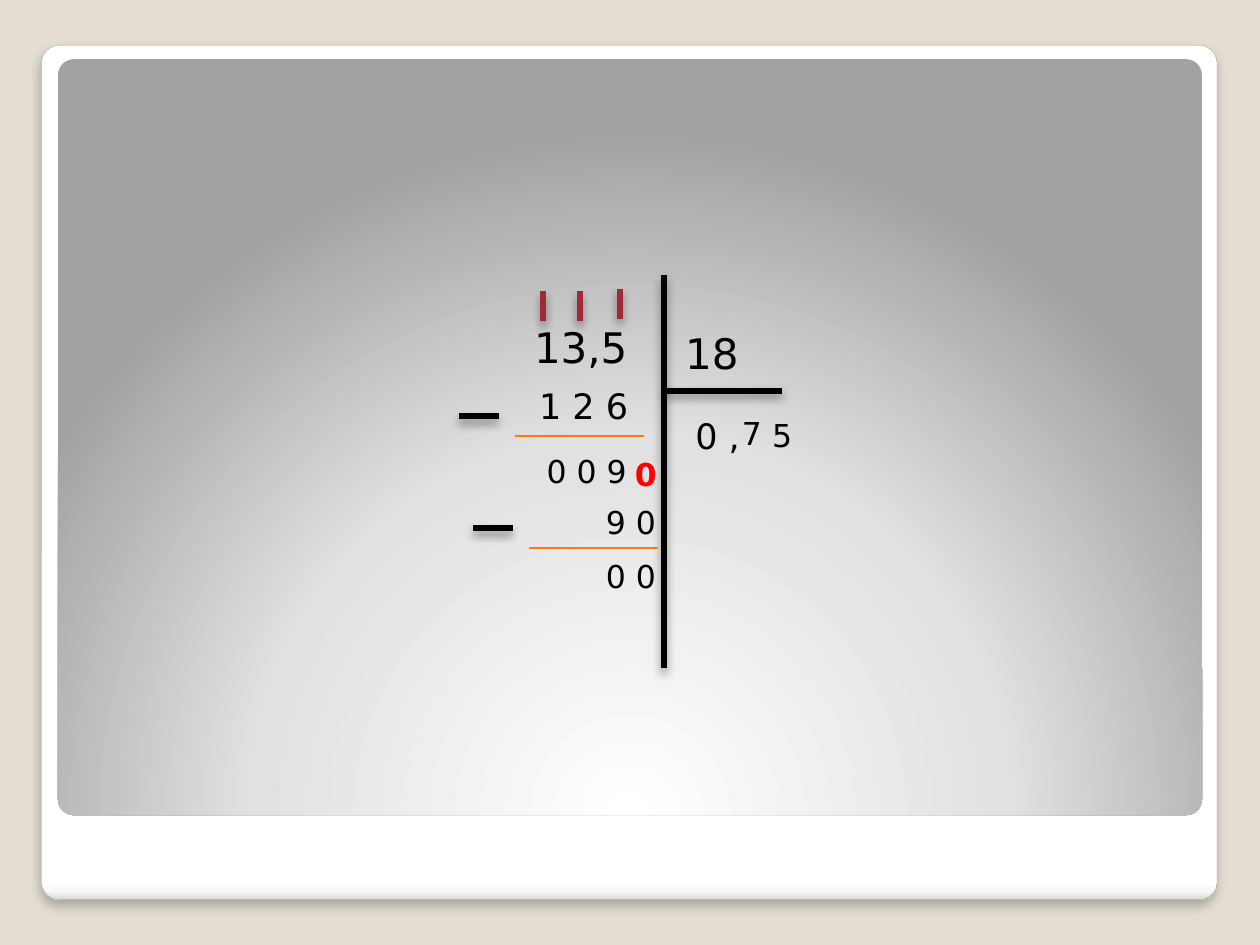
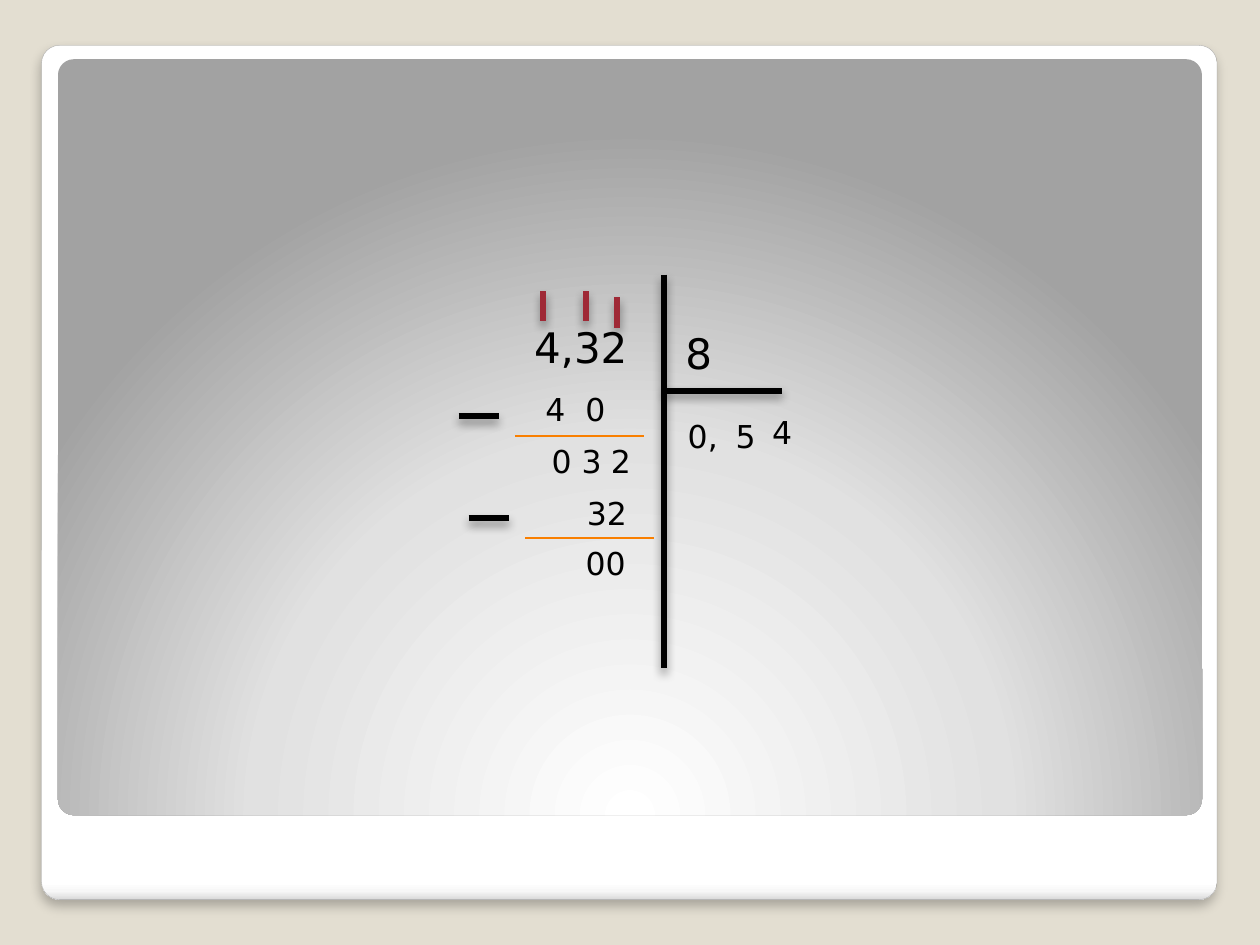
from dataclasses import dataclass

from lxml import etree
from pptx import Presentation
from pptx import util as u
from pptx.dml.color import RGBColor
from pptx.enum import shapes, text
from pptx.oxml import parse_xml
from pptx.oxml.ns import nsdecls, qn

SCALE = 9144  # 100 px to the inch
FONT = "DejaVu Sans"
SAND, BLACK, WINE, ORANGE, RED, GREY = (
    "E3DED1", "000000", "9F2936", "F97F00", "FF0000", "A4A4A4")
THICK, THIN = 3.35, 0.75


@dataclass
class Shade:
    alpha: int
    blur: float
    dist: float


@dataclass
class Panel:
    box: tuple[int, int, int, int]
    stops: list[tuple[int, str]]
    flow: str
    edge: str | None = None
    shade: Shade | None = None


@dataclass
class Word:
    x: int
    y: int
    w: int
    h: int
    body: str
    size: int = 18
    color: str = BLACK
    bold: bool = False
    wrap: bool = False
    gap: int = 0  # letter spacing, hundredths of a point


@dataclass
class Sum:
    ticks: list[tuple[int, int]]
    rules: list[tuple[int, int]]
    words: list[Word]


# Shared frame
SOFT = Shade(25, 6, 4)
DROP = Shade(40, 5.2, 3)
PANELS = [
    Panel((33, 36, 933, 678),
          [(0, "FFFFFF"), (98, "FFFFFF"), (99, "F7F7F7"), (100, "DADADA")],
          '<a:lin ang="5400000" scaled="0"/>', GREY, SOFT),
    Panel((46, 47, 908, 600),
          [(0, "FFFFFF"), (55, "E1E1E1"), (100, "A2A2A2")],
          '<a:path path="circle"><a:fillToRect l="50000" t="175000" '
          'r="50000" b="-75000"/></a:path>'),
]

# The two divisions
SUMS = [
    Sum([(431, 231), (460, 231), (492, 229)],
        [(409, 346), (420, 435)],
        [Word(414, 250, 97, 50, "13,5", 24),
         Word(534, 255, 63, 50, "18", 24),
         Word(542, 324, 58, 44, "0 ,", 20),
         Word(579, 324, 36, 40, "7"),
         Word(418, 300, 93, 44, "1 2 6", 20),
         Word(424, 354, 86, 40, "0 0 9"),
         Word(494, 356, 35, 40, "0", color=RED, bold=True, wrap=True),
         Word(603, 325, 36, 40, "5"),
         Word(471, 394, 61, 40, "9 0"),
         Word(471, 437, 61, 40, "0 0")]),
    Sum([(431, 231), (465, 231), (490, 236)],
        [(409, 346), (417, 427)],
        [Word(414, 250, 97, 50, "4,32", 24),
         Word(534, 255, 42, 50, "8", 24),
         Word(536, 326, 45, 40, "0,"),
         Word(574, 326, 36, 40, "5"),
         Word(423, 305, 70, 40, "4 0", gap=286),
         Word(428, 346, 61, 40, "0 3"),
         Word(475, 346, 36, 40, "2"),
         Word(603, 323, 36, 40, "4"),
         Word(456, 387, 52, 40, "32"),
         Word(455, 427, 52, 40, "00")]),
]


def px(n: int) -> u.Emu:
    return u.Emu(n * SCALE)


def rgb(code: str) -> RGBColor:
    return RGBColor.from_string(code)


def cast(item, shade: Shade | None) -> None:
    """Give a shape or connector its shadow, or none."""
    props = item._element.spPr
    for old in props.findall(qn("a:effectLst")):
        props.remove(old)
    list_ = etree.SubElement(props, qn("a:effectLst"))
    if shade:
        drop = etree.SubElement(
            list_, qn("a:outerShdw"), blurRad=str(u.Pt(shade.blur)),
            dist=str(u.Pt(shade.dist)), dir="5400000", rotWithShape="0")
        tint = etree.SubElement(drop, qn("a:srgbClr"), val=BLACK)
        etree.SubElement(tint, qn("a:alpha"), val=str(shade.alpha * 1000))


def draw_panel(host, panel: Panel) -> None:
    kind = shapes.MSO_SHAPE.ROUNDED_RECTANGLE
    item = host.add_shape(kind, *map(px, panel.box))
    item.adjustments[0] = 0.021
    stops = "".join(
        f'<a:gs pos="{pos * 1000}"><a:srgbClr val="{code}"/></a:gs>'
        for pos, code in panel.stops)
    item._element.spPr.find(qn("a:prstGeom")).addnext(parse_xml(
        f'<a:gradFill {nsdecls("a")} rotWithShape="1">'
        f'<a:gsLst>{stops}</a:gsLst>{panel.flow}</a:gradFill>'))
    if panel.edge:
        item.line.color.rgb = rgb(panel.edge)
        item.line.width = u.Pt(0.16)
    else:
        item.line.fill.background()
    cast(item, panel.shade)


def draw_line(host, x: int, y: int, w: int, h: int, color: str = BLACK,
              width: float = THICK, shade: Shade | None = DROP) -> None:
    kind = shapes.MSO_CONNECTOR.STRAIGHT
    line = host.add_connector(kind, px(x), px(y), px(x + w), px(y + h))
    line.line.color.rgb = rgb(color)
    line.line.width = u.Pt(width)
    cast(line, shade)


def draw_word(host, word: Word) -> None:
    box = host.add_textbox(px(word.x), px(word.y), px(word.w), px(word.h))
    frame = box.text_frame
    frame.text = word.body
    frame.word_wrap = word.wrap
    frame.auto_size = text.MSO_AUTO_SIZE.SHAPE_TO_FIT_TEXT
    run = frame.paragraphs[0].runs[0]
    run.font.name = FONT
    run.font.size = u.Pt(word.size)
    run.font.bold = word.bold
    run.font.color.rgb = rgb(word.color)
    if word.gap:
        run.font._element.set("spc", str(word.gap))


def draw_sum(host, task: Sum) -> None:
    # Division bracket
    bars = host.add_group_shape().shapes
    draw_line(bars, 527, 218, 0, 312)
    draw_line(bars, 527, 310, 94, 0)
    # Marks over the digits
    for x, y in task.ticks:
        draw_line(host, x, y, 0, 24, WINE)
    # Each subtraction: a rule with its minus sign up and to the left
    for x, y in task.rules:
        draw_line(host, x, y, 102, 0, ORANGE, THIN, None)
        draw_line(host, x - 45, y - 16, 32, 0)
    for word in task.words:
        draw_word(host, word)


def main() -> None:
    deck = Presentation()
    deck.slide_width, deck.slide_height = px(1000), px(750)
    for task in SUMS:
        slide = deck.slides.add_slide(deck.slide_layouts[6])
        back = slide.background.fill
        back.solid()
        back.fore_color.rgb = rgb(SAND)
        for panel in PANELS:
            draw_panel(slide.shapes, panel)
        draw_sum(slide.shapes, task)
    deck.save("out.pptx")


if __name__ == "__main__":
    main()
